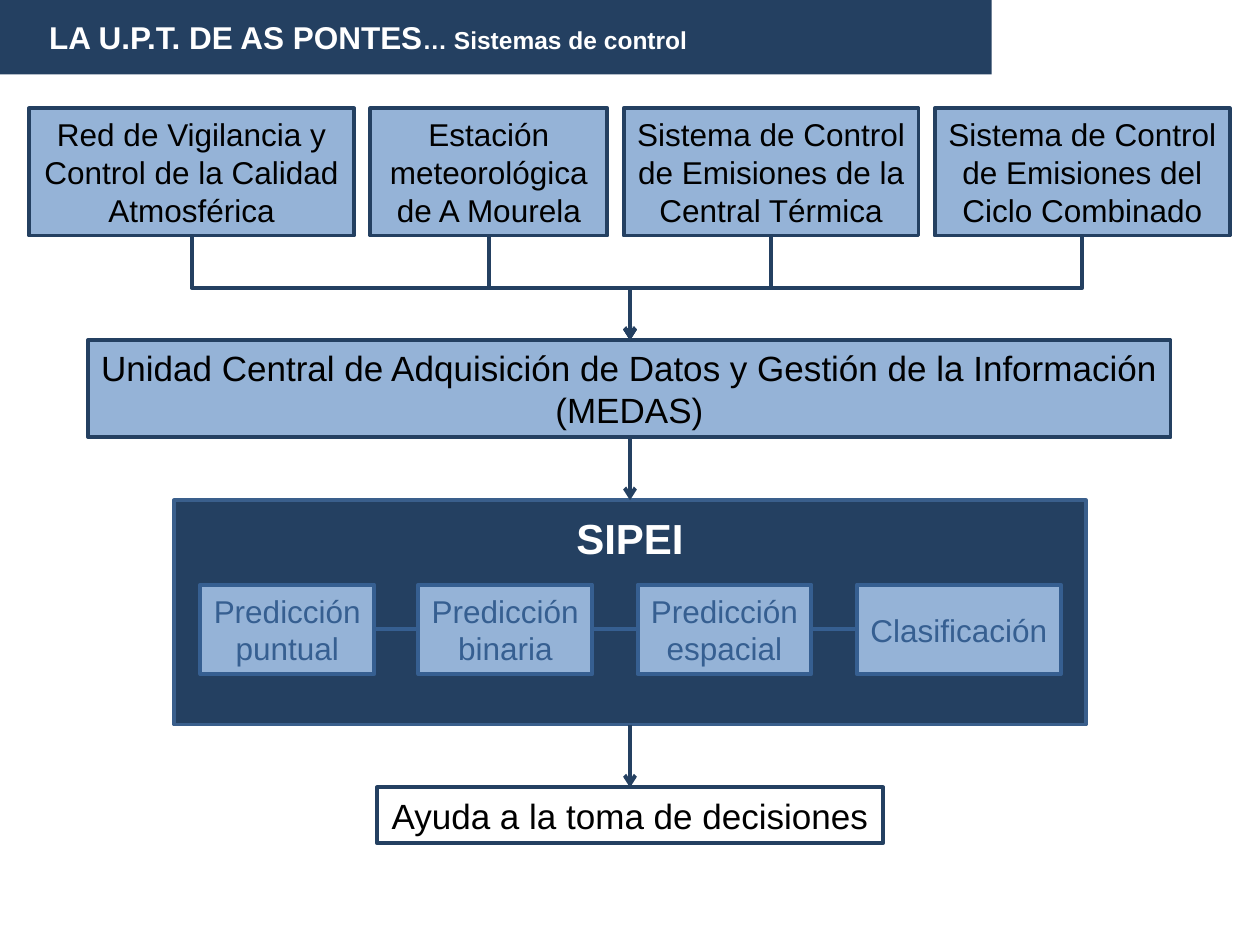
"""Build the control systems diagram of the As Pontes production unit."""
from dataclasses import dataclass
from itertools import pairwise

from pptx import Presentation
from pptx.dml.color import RGBColor
from pptx.enum.shapes import MSO_CONNECTOR, MSO_SHAPE
from pptx.enum.text import MSO_ANCHOR, MSO_AUTO_SIZE, PP_ALIGN
from pptx.oxml.ns import qn
from pptx.shapes.connector import Connector
from pptx.slide import Slide
from pptx.text.text import Font
from pptx.util import Inches, Pt

RECTANGLE = MSO_SHAPE.RECTANGLE
STRAIGHT, ELBOW = MSO_CONNECTOR.STRAIGHT, MSO_CONNECTOR.ELBOW
MIDDLE = MSO_ANCHOR.MIDDLE
CENTER, LEFT = PP_ALIGN.CENTER, PP_ALIGN.LEFT
NO_AUTOFIT = MSO_AUTO_SIZE.NONE

COLORS = {
    "navy": "244061",
    "frame": "3A5F8C",
    "blue": "365F91",
    "light": "95B3D7",
    "white": "FFFFFF",
    "black": "000000",
}
FONT = "Arial"
MIDDLE_X = 5.0


@dataclass(frozen=True)
class Box:
    text: str
    left: float
    top: float
    width: float
    height: float
    fill: str | None = "light"
    line: str | None = "navy"
    color: str = "black"
    size: int = 18
    weight: float = 2.25
    bold: bool = False
    wrap: bool = False

    @property
    def right(self) -> float:
        return self.left + self.width

    @property
    def bottom(self) -> float:
        return self.top + self.height

    @property
    def center_x(self) -> float:
        return self.left + self.width / 2

    @property
    def center_y(self) -> float:
        return self.top + self.height / 2


def source(text: str, left: float, width: float) -> Box:
    return Box(text, left, 0.86, width, 1.01, wrap=True)


def module(text: str, left: float, width: float = 1.38) -> Box:
    return Box(text, left, 4.64, width, 0.71, line="blue", color="blue")


SOURCES = [
    source("Red de Vigilancia y Control de la Calidad Atmosférica", 0.23, 2.58),
    source("Estación meteorológica\nde A Mourela", 2.94, 1.88),
    source("Sistema de Control de Emisiones de la Central Térmica", 4.95, 2.34),
    source("Sistema de Control de Emisiones del Ciclo Combinado", 7.42, 2.34),
]
MEDAS = Box(
    "Unidad Central de Adquisición de Datos y Gestión de la Información\n(MEDAS)",
    0.7, 2.7, 8.59, 0.77, size=20,
)
SIPEI_PANEL = Box("", 1.38, 3.97, 7.24, 1.78, fill="navy", line="frame", weight=2)
SIPEI_HEADING = Box(
    "SIPEI", 4.47, 4.02, 1.06, 0.5,
    fill=None, line=None, color="white", size=24, bold=True,
)
MODULES = [
    module("Predicción\npuntual", 1.59),
    module("Predicción\nbinaria", 3.32),
    module("Predicción\nespacial", 5.06),
    module("Clasificación", 6.8, 1.62),
]
DECISIONS = Box("Ayuda a la toma de decisiones", 2.99, 6.25, 4.02, 0.44, fill=None, size=20)


def rgb(name: str) -> RGBColor:
    return RGBColor.from_string(COLORS[name])


def style_font(font: Font, size: int, color: str, bold: bool) -> None:
    font.name = FONT
    font.size = Pt(size)
    font.bold = bold
    font.color.rgb = rgb(color)


def draw_title(slide: Slide) -> None:
    title = slide.shapes.title
    title.left, title.top = Inches(0), Inches(0)
    title.width, title.height = Inches(7.87), Inches(0.59)
    title.fill.solid()
    title.fill.fore_color.rgb = rgb("navy")
    frame = title.text_frame
    frame.auto_size = NO_AUTOFIT
    frame.word_wrap = False
    frame.vertical_anchor = MIDDLE
    frame.margin_left = Inches(0.39)
    heading = frame.paragraphs[0]
    heading.alignment = LEFT
    for text, size in (("LA U.P.T. DE AS PONTES", 18), ("… Sistemas de control", 14)):
        run = heading.add_run()
        run.text = text
        style_font(run.font, size, "white", True)


def draw_box(slide: Slide, box: Box) -> None:
    shape = slide.shapes.add_shape(
        RECTANGLE, Inches(box.left), Inches(box.top), Inches(box.width), Inches(box.height)
    )
    shape.shadow.inherit = False
    if box.fill:
        shape.fill.solid()
        shape.fill.fore_color.rgb = rgb(box.fill)
    else:
        shape.fill.background()
    if box.line:
        shape.line.color.rgb = rgb(box.line)
        shape.line.width = Pt(box.weight)
    else:
        shape.line.fill.background()
    frame = shape.text_frame
    frame.text = box.text
    frame.word_wrap = box.wrap
    frame.vertical_anchor = MIDDLE
    for paragraph in frame.paragraphs:
        paragraph.alignment = CENTER
        for run in paragraph.runs:
            style_font(run.font, box.size, box.color, box.bold)


def style_connector(connector: Connector, color: str, arrow: bool) -> None:
    connector.line.color.rgb = rgb(color)
    connector.line.width = Pt(2.25)
    properties = connector._element.spPr
    if arrow:
        line = properties.find(qn("a:ln"))
        line.append(line.makeelement(qn("a:tailEnd"), {"type": "arrow"}))
    properties.append(properties.makeelement(qn("a:effectLst"), {}))


def draw_line(
    slide: Slide, x1: float, y1: float, x2: float, y2: float, color: str, arrow: bool
) -> None:
    connector = slide.shapes.add_connector(
        STRAIGHT, Inches(x1), Inches(y1), Inches(x2), Inches(y2)
    )
    style_connector(connector, color, arrow)


def draw_elbow(slide: Slide, upper: Box, lower: Box) -> None:
    drop = lower.top - upper.bottom
    span = abs(MIDDLE_X - upper.center_x)
    center_x = (MIDDLE_X + upper.center_x) / 2
    center_y = (upper.bottom + lower.top) / 2
    connector = slide.shapes.add_connector(
        ELBOW,
        Inches(center_x - drop / 2), Inches(center_y - span / 2),
        Inches(center_x + drop / 2), Inches(center_y + span / 2),
    )
    transform = connector._element.spPr.find(qn("a:xfrm"))
    from_left = upper.center_x < MIDDLE_X
    transform.set("rot", str((270 if from_left else 90) * 60000))
    if from_left:
        transform.set("flipH", "1")
    style_connector(connector, "navy", True)


def main() -> None:
    presentation = Presentation()
    presentation.slide_width, presentation.slide_height = Inches(10), Inches(7.5)
    slide = presentation.slides.add_slide(presentation.slide_layouts[5])
    draw_title(slide)
    for box in (*SOURCES, MEDAS, SIPEI_PANEL, *MODULES, SIPEI_HEADING, DECISIONS):
        draw_box(slide, box)
    for box in SOURCES:
        draw_elbow(slide, box, MEDAS)
    for first, second in pairwise(MODULES):
        draw_line(slide, first.right, first.center_y, second.left, first.center_y, "blue", False)
    for upper, lower in pairwise((MEDAS, SIPEI_PANEL, DECISIONS)):
        draw_line(slide, MIDDLE_X, upper.bottom, MIDDLE_X, lower.top, "navy", True)
    presentation.save("out.pptx")


if __name__ == "__main__":
    main()
